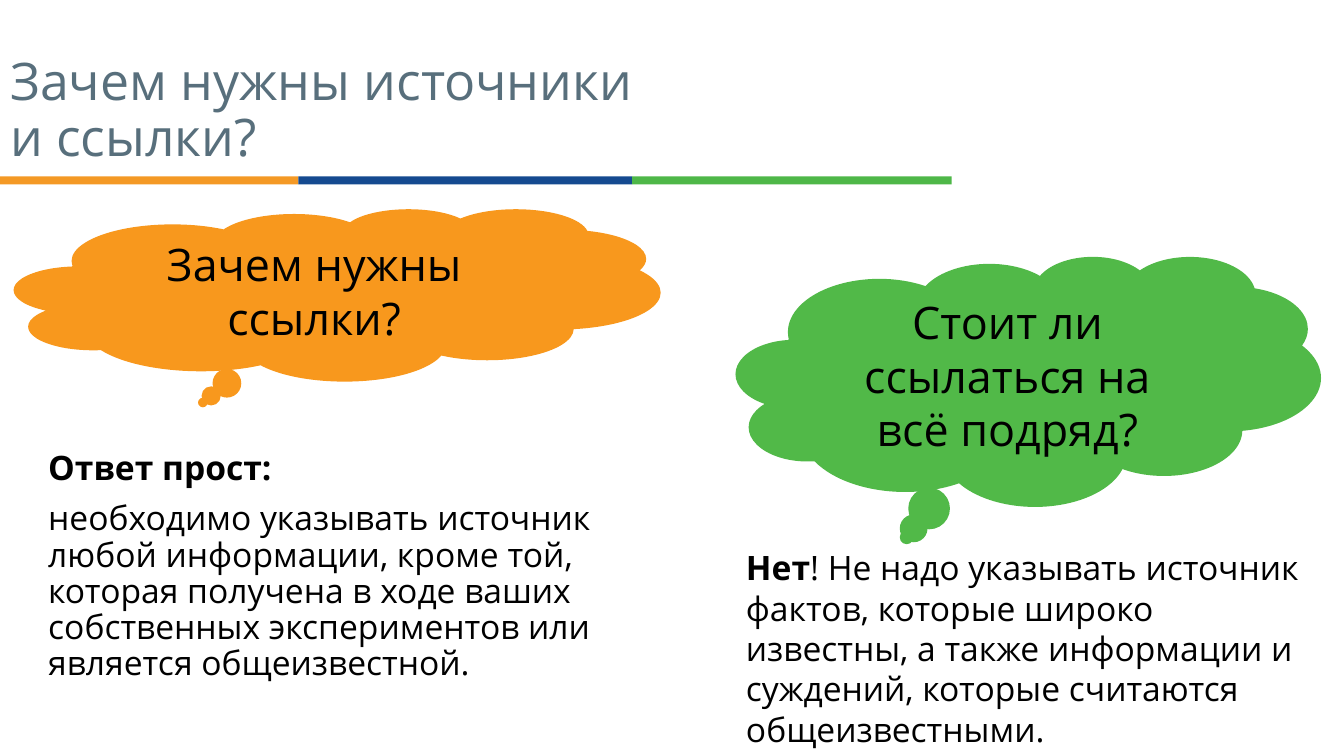
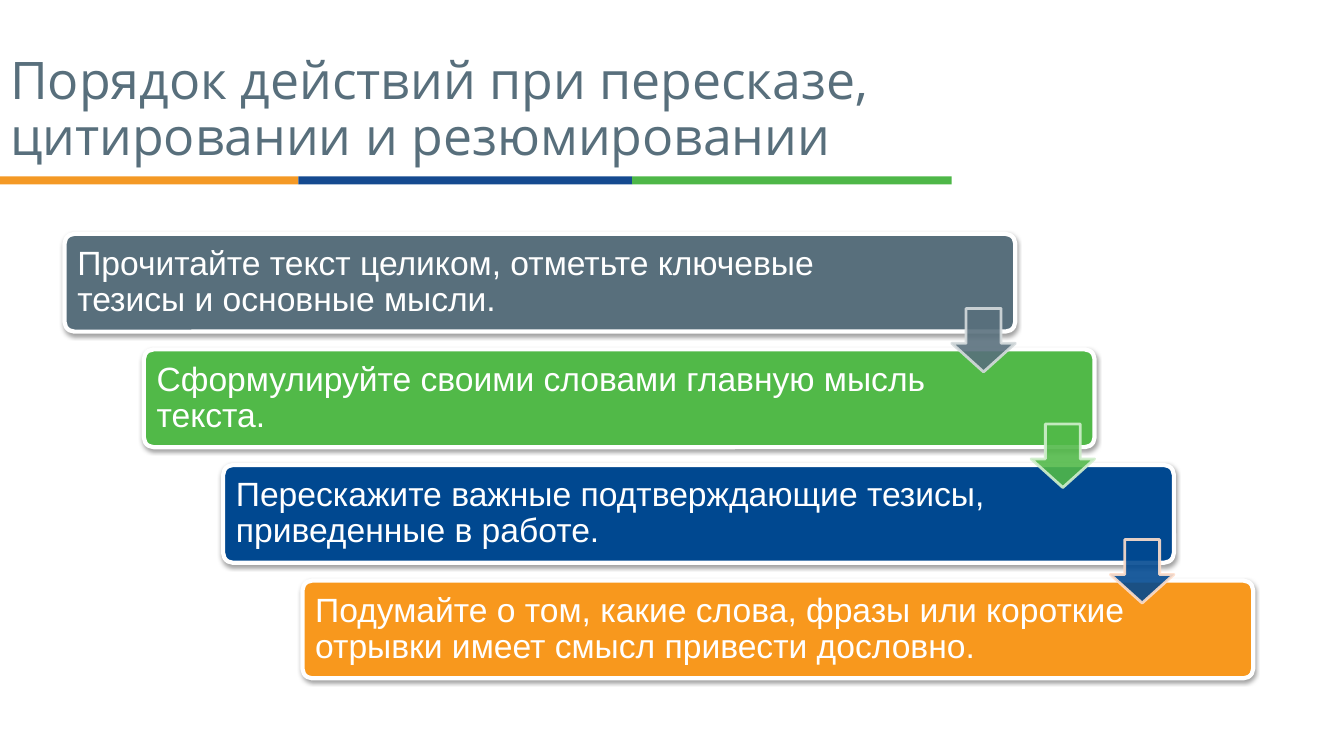
from lxml import etree
from pptx import Presentation
from pptx.dml.color import RGBColor
from pptx.enum import shapes, text
from pptx.oxml import ns
from pptx.util import Inches, Pt

SLATE, GREEN, BLUE, ORANGE = "586F7C", "51B948", "004890", "F8981D"
BLACK, WHITE = "000000", "FFFFFF"
FONT, STEP_FONT = "Open Sans", "Arial"
BANDS = [(0, 2.96, "F49925"), (2.96, 3.31, "154A90"), (6.27, 3.17, "4EB748")]
STEPS = [
    ("Прочитайте текст целиком, отметьте ключевые тезисы и основные мысли.", SLATE, "D5DBDD"),
    ("Сформулируйте своими словами главную мысль текста.", GREEN, "D1EFCD"),
    ("Перескажите важные подтверждающие тезисы, приведенные в работе.", BLUE, "FEDECB"),
    ("Подумайте о том, какие слова, фразы или короткие отрывки имеет смысл "
     "привести дословно.", ORANGE, None),
]


def rgb(value):
    """Turn a hex string into a colour."""
    return RGBColor.from_string(value)


def style_run(r, size, color, font=FONT, bold=False):
    """Format one run."""
    r.font.size, r.font.name, r.font.bold = Pt(size), font, bold
    r.font.color.rgb = rgb(color)


def add_box(s, kind, box, fill, line=None, width=1):
    """Add a filled preset shape without a theme shadow."""
    sp = s.shapes.add_shape(kind, *map(Inches, box))
    sp.shadow.inherit = False
    sp.fill.solid()
    sp.fill.fore_color.rgb = rgb(fill)
    if line:
        sp.line.color.rgb = rgb(line)
        sp.line.width = Pt(width)
    else:
        sp.line.fill.background()
    return sp


def add_shadow(sp):
    """Give a shape a soft shadow below it."""
    effects = sp.element.spPr.find(ns.qn("a:effectLst"))
    shadow = etree.SubElement(effects, ns.qn("a:outerShdw"), blurRad=str(Pt(3.1)),
                              dist=str(Pt(1.6)), dir="5400000", rotWithShape="0")
    color = etree.SubElement(shadow, ns.qn("a:srgbClr"), val=BLACK)
    etree.SubElement(color, ns.qn("a:alpha"), val="37000")


def set_opacity(sp, percent):
    """Make the fill and line of a shape partly transparent."""
    for color in sp.element.spPr.iter(ns.qn("a:srgbClr")):
        etree.SubElement(color, ns.qn("a:alpha"), val=str(percent * 1000))


def add_bands(layout, s):
    """Place the three-colour rule on the shared layout."""
    for left, width, color in BANDS:
        band = add_box(s, shapes.MSO_SHAPE.RECTANGLE, (left, 1.75, width, 0.08), color)
        layout.shapes.element.append(band.element)


def set_title(s, title, box):
    """Place and format the slide title."""
    sp = s.shapes.title
    sp.left, sp.top, sp.width, sp.height = map(Inches, box)
    tf = sp.text_frame
    tf.text = title
    tf.word_wrap = True
    tf.auto_size = text.MSO_AUTO_SIZE.NONE
    tf.vertical_anchor = text.MSO_ANCHOR.TOP
    p = tf.paragraphs[0]
    p.alignment, p.line_spacing = text.PP_ALIGN.LEFT, 0.9
    for r in p.runs:
        style_run(r, 37, SLATE)


def add_cloud(s, question, box, color):
    """Draw a thought cloud holding a question."""
    sp = add_box(s, shapes.MSO_SHAPE.CLOUD_CALLOUT, box, color)
    sp.adjustments[0], sp.adjustments[1] = -0.208, 0.625
    tf = sp.text_frame
    tf.text = question
    tf.word_wrap = True
    tf.vertical_anchor = text.MSO_ANCHOR.MIDDLE
    p = tf.paragraphs[0]
    p.alignment = text.PP_ALIGN.CENTER
    style_run(p.runs[0], 32, BLACK)


def add_answer(s, box, paragraphs, spacing=1.0):
    """Write paragraphs of (text, bold) runs in a text box."""
    tf = s.shapes.add_textbox(*map(Inches, box)).text_frame
    tf.word_wrap = True
    for i, runs in enumerate(paragraphs):
        p = tf.add_paragraph() if i else tf.paragraphs[0]
        p.line_spacing = spacing
        if i:
            p.space_before = Pt(10)
        for words, bold in runs:
            r = p.add_run()
            r.text = words
            style_run(r, 24, BLACK, bold=bold)


def add_step(s, left, top, words, color):
    """Draw one step card, leaving room for its arrow on the right."""
    sp = add_box(s, shapes.MSO_SHAPE.ROUNDED_RECTANGLE, (left, top, 9.43, 0.97), color, WHITE, 3)
    sp.adjustments[0] = 0.1
    add_shadow(sp)
    tf = sp.text_frame
    tf.text = words
    tf.word_wrap = True
    tf.margin_left, tf.margin_right = Inches(0.1), Inches(1.17)
    tf.vertical_anchor = text.MSO_ANCHOR.MIDDLE
    p = tf.paragraphs[0]
    p.alignment, p.line_spacing = text.PP_ALIGN.LEFT, 0.9
    style_run(p.runs[0], 24, WHITE, STEP_FONT)


def add_staircase(s, left, top, width, height):
    """Spread the step cards diagonally and link them with arrows."""
    gaps = len(STEPS) - 1
    dx, dy = (width - 9.43) / gaps, (height - 0.97) / gaps
    corners = [(left + i * dx, top + i * dy) for i in range(len(STEPS))]
    for (x, y), (words, color, _) in zip(corners, STEPS):
        add_step(s, x, y, words, color)
    for (x, y), (_, color, outline) in zip(corners[:-1], STEPS):
        arrow = add_box(s, shapes.MSO_SHAPE.DOWN_ARROW, (x + 8.8, y + 0.74, 0.63, 0.63),
                        color, outline, 2)
        arrow.adjustments[0], arrow.adjustments[1] = 0.55, 0.45
        set_opacity(arrow, 89)


def build_questions(s):
    """Build the slide with two questions and answers."""
    set_title(s, "Зачем нужны источники\vи ссылки?", (0, 0.5, 7.53, 1.28))
    add_answer(s, (0.38, 4.43, 5.63, 2.43), [
        [("Ответ прост:", True)],
        [("необходимо указывать источник любой информации, кроме той, которая получена "
          "в ходе ваших собственных экспериментов или является общеизвестной.", False)],
    ], 0.9)
    add_cloud(s, "Зачем нужны ссылки?", (0.14, 2.07, 6.41, 1.71), ORANGE)
    add_cloud(s, "Стоит ли ссылаться на всё подряд?", (7.3, 2.54, 5.8, 2.48), GREEN)
    add_answer(s, (7.3, 5.38, 5.89, 2.1), [
        [("Нет", True),
         ("! Не надо указывать источник фактов, которые широко известны, а также "
          "информации и суждений, которые считаются общеизвестными.", False)],
    ])


def build_steps(s):
    """Build the slide with the order of actions."""
    set_title(s, "Порядок действий при пересказе,\vцитировании и резюмировании",
              (0, 0.49, 8.91, 1.18))
    add_staircase(s, 0.64, 2.32, 11.79, 4.41)


def main():
    """Build and save the presentation."""
    prs = Presentation()
    prs.slide_width, prs.slide_height = Inches(13.33), Inches(7.5)
    layout = prs.slide_layouts[5]
    for i, build in enumerate((build_questions, build_steps)):
        s = prs.slides.add_slide(layout)
        if i == 0:
            add_bands(layout, s)
        build(s)
    prs.save("out.pptx")


if __name__ == "__main__":
    main()
